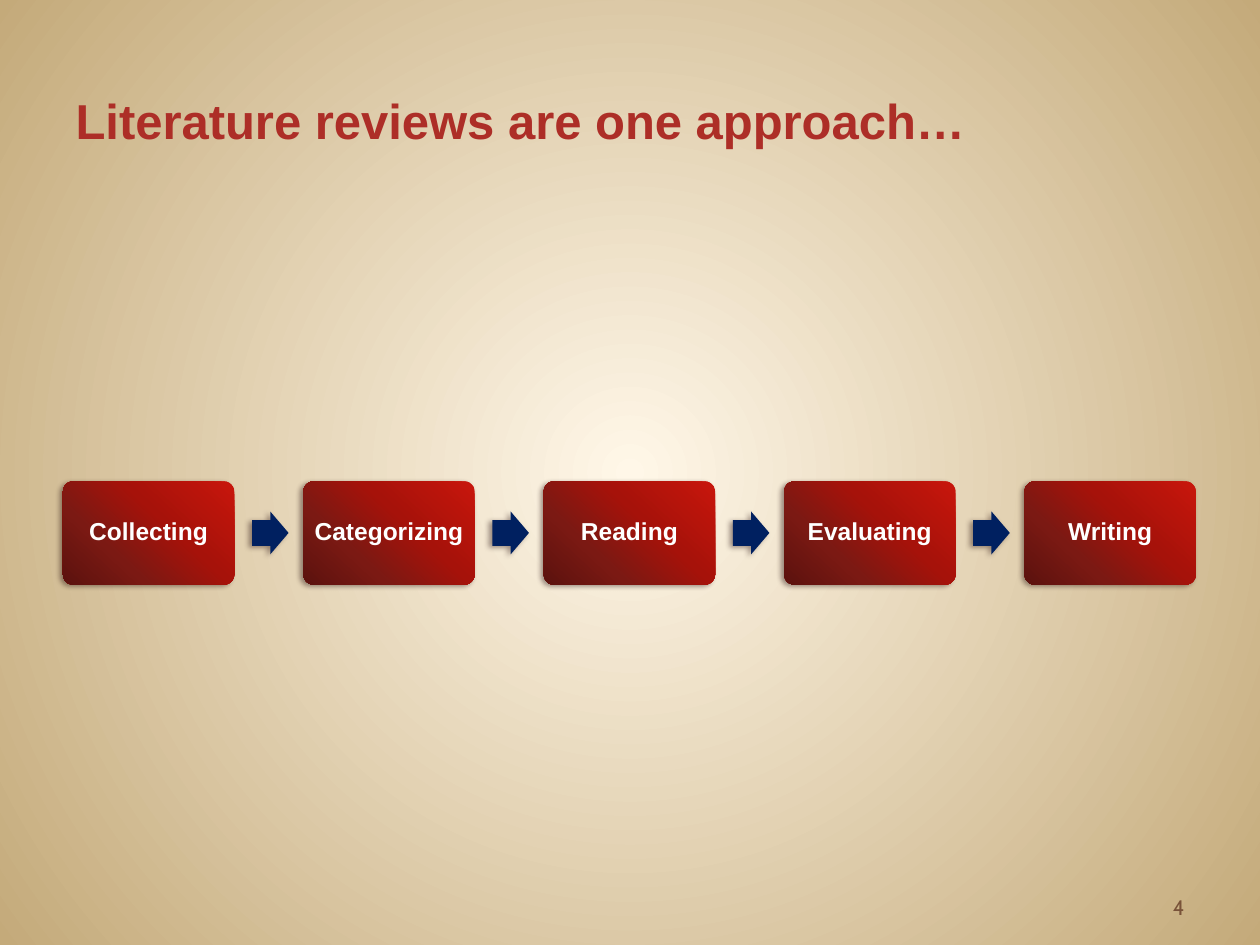
from lxml import etree
from pptx import Presentation
from pptx.dml.color import RGBColor
from pptx.enum.shapes import MSO_SHAPE
from pptx.enum.text import MSO_ANCHOR, PP_ALIGN
from pptx.oxml import parse_xml
from pptx.oxml.ns import nsdecls, qn
from pptx.util import Inches, Pt

ROUND_RECT, RIGHT_ARROW = MSO_SHAPE.ROUNDED_RECTANGLE, MSO_SHAPE.RIGHT_ARROW
MIDDLE, BOTTOM = MSO_ANCHOR.MIDDLE, MSO_ANCHOR.BOTTOM
LEFT, CENTER, RIGHT = PP_ALIGN.LEFT, PP_ALIGN.CENTER, PP_ALIGN.RIGHT

STEPS = ["Collecting", "Categorizing", "Reading", "Evaluating", "Writing"]
RED_STOPS = [(0, "C8160C"), (40, "A6120A"), (70, "7B1913"), (100, "5B120E")]
SAND_STOPS = [(0, "FFF7E8"), (100, "C4AA7A")]
RED_ANGLE = '<a:lin ang="7980000" scaled="0"/>'
FROM_CENTER = ('<a:path path="circle"><a:fillToRect l="50000" t="50000" '
               'r="50000" b="50000"/></a:path>')
SHADOW = (f'<a:outerShdw {nsdecls("a")} blurRad="{Pt(3.1)}" dist="{Pt(2)}" '
          'dir="9000000" rotWithShape="0"><a:srgbClr val="1A0000">'
          '<a:alpha val="40000"/></a:srgbClr></a:outerShdw>')


def set_gradient(fill, element, stops, direction):
    fill.gradient()
    grad = next(element.iter(qn("a:gradFill")))
    for child in list(grad):
        grad.remove(child)
    stop_list = etree.SubElement(grad, qn("a:gsLst"))
    for position, color in stops:
        stop = etree.SubElement(stop_list, qn("a:gs"), pos=str(position * 1000))
        etree.SubElement(stop, qn("a:srgbClr"), val=color)
    grad.append(parse_xml(direction.replace(" ", f" {nsdecls('a')} ", 1)))


def add_text(sp, text, size, font, color, bold, align, anchor):
    tf = sp.text_frame
    tf.word_wrap = True
    tf.vertical_anchor = anchor
    p = tf.paragraphs[0]
    p.alignment = align
    r = p.add_run()
    r.text = text
    r.font.size = Pt(size)
    r.font.name = font
    r.font.bold = bold
    r.font.color.rgb = RGBColor.from_string(color)
    return tf


prs = Presentation()
prs.slide_width, prs.slide_height = Inches(10), Inches(7.5)
s = prs.slides.add_slide(prs.slide_layouts[5])

# Background
set_gradient(s.background.fill, s.element, SAND_STOPS, FROM_CENTER)

# Title
title = s.shapes.title
title.left, title.top = Inches(0.5), Inches(0.33)
title.width, title.height = Inches(9), Inches(1.25)
add_text(title, "Literature reviews are one approach…", 28, "Arial", "AD2E27",
         True, LEFT, MIDDLE)

# Process: a box per step, with an arrow to the next one
for i, step in enumerate(STEPS):
    x = 0.5 + i * 1.908
    box = s.shapes.add_shape(ROUND_RECT, Inches(x), Inches(3.82),
                             Inches(1.36), Inches(0.82))
    box.adjustments[0] = 0.1
    set_gradient(box.fill, box.element, RED_STOPS, RED_ANGLE)
    tf = add_text(box, step, 14, "Arial", "FFFFFF", True, CENTER, MIDDLE)
    tf.margin_left = tf.margin_right = Inches(0.06)
    tf.margin_top = tf.margin_bottom = Inches(0.06)
    tf.paragraphs[0].line_spacing = 0.9
    parts = [box]

    if i < len(STEPS) - 1:
        arrow = s.shapes.add_shape(RIGHT_ARROW, Inches(x + 1.5), Inches(4.06),
                                   Inches(0.29), Inches(0.34))
        arrow.adjustments[0], arrow.adjustments[1] = 0.6, 0.5
        arrow.fill.solid()
        arrow.fill.fore_color.rgb = RGBColor.from_string("002060")
        parts.append(arrow)

    for sp in parts:
        sp.line.fill.background()
        sp.shadow.inherit = False
        next(sp.element.iter(qn("a:effectLst"))).append(parse_xml(SHADOW))

# Slide number
number = s.shapes.add_textbox(Inches(7.17), Inches(6.83), Inches(2.33), Inches(0.52))
add_text(number, "4", 12, "Cabin", "795339", False, RIGHT, BOTTOM)

prs.save("out.pptx")
